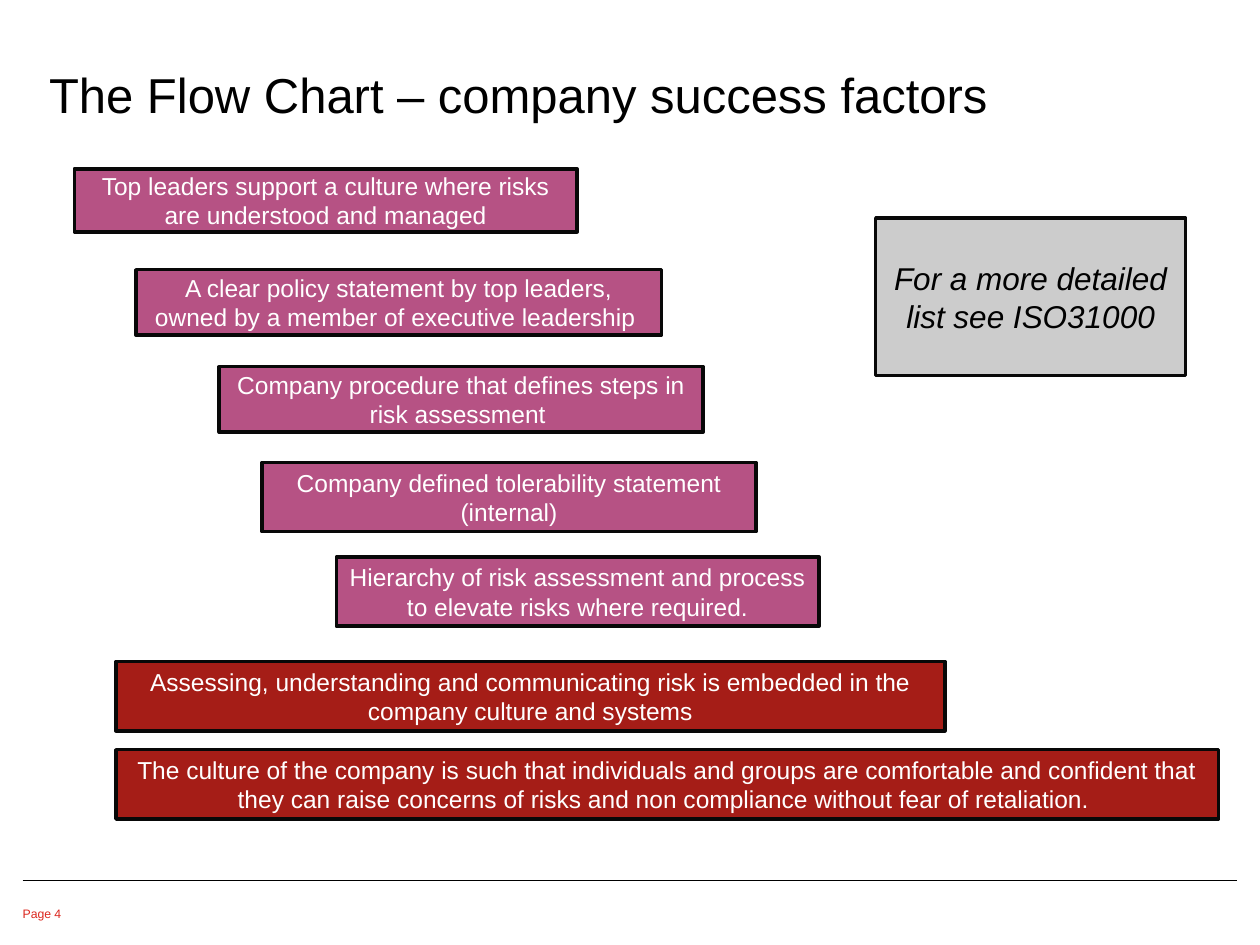
"""Build the company success factors flow chart slide."""
from dataclasses import dataclass

from lxml import etree
from pptx import Presentation
from pptx.dml.color import RGBColor
from pptx.enum import shapes, text
from pptx.oxml.ns import qn
from pptx.util import Inches, Pt


@dataclass(frozen=True)
class Theme:
    font: str = "Arial"
    black: str = "000000"
    white: str = "FFFFFF"
    border: str = "080808"
    step: str = "B65284"
    culture: str = "A51D17"
    note: str = "CCCCCC"
    page: str = "DC271E"
    title_size: int = 28
    note_size: int = 18
    body_size: int = 14
    page_size: int = 7
    border_width: float = 2
    rule_width: float = 0.75


THEME = Theme()

TITLE = ("The Flow Chart – company success factors", (0.39, -0.08, 9.36, 1.06))
PAGE = ("Page 4", (0.18, 7.19, 0.41, 0.15))
NOTE = ("For a more detailed list see ISO31000", (6.95, 1.73, 2.46, 1.25))
STEPS = [
    ("Top leaders support a culture where risks are understood and managed",
     (0.59, 1.34, 3.99, 0.5)),
    ("A clear policy statement by top leaders, owned by a member of executive leadership ",
     (1.08, 2.14, 4.17, 0.52)),
    ("Company procedure that defines steps in risk assessment ",
     (1.74, 2.91, 3.84, 0.52)),
    ("Company defined tolerability statement (internal)",
     (2.08, 3.67, 3.92, 0.55)),
    ("Hierarchy of risk assessment and process to elevate risks where required.",
     (2.67, 4.42, 3.83, 0.55)),
]
CULTURE_LEFT, CULTURE_TOP, CULTURE_HEIGHT, CULTURE_PITCH = 0.92, 5.25, 0.55, 0.7
CULTURE = [
    ("Assessing, understanding and communicating risk is embedded in the "
     "company culture and systems", 6.58),
    ("The culture of the company is such that individuals and groups are comfortable "
     "and confident that they can raise concerns of risks and non compliance "
     "without fear of retaliation. ", 8.75),
]
RULE_LEFT, RULE_RIGHT, RULE_TOP = 0.18, 9.82, 6.99


def color(value):
    return RGBColor.from_string(value)


def write(sp, words, size, ink, italic=None):
    tf = sp.text_frame
    tf.word_wrap = True
    tf.text = words
    p = tf.paragraphs[0]
    font = p.runs[0].font
    font.name, font.size, font.italic = THEME.font, Pt(size), italic
    font.color.rgb = color(ink)
    return tf, p


def add_label(s, words, place, size, ink, anchor):
    sp = s.shapes.add_textbox(*map(Inches, place))
    tf, p = write(sp, words, size, ink)
    tf.margin_left = tf.margin_right = tf.margin_top = tf.margin_bottom = 0
    tf.vertical_anchor = anchor


def add_box(s, words, place, fill, size=THEME.body_size, ink=THEME.white, italic=None):
    sp = s.shapes.add_shape(shapes.MSO_SHAPE.RECTANGLE, *map(Inches, place))
    sp.shadow.inherit = False
    sp.fill.solid()
    sp.fill.fore_color.rgb = color(fill)
    sp.line.color.rgb = color(THEME.border)
    sp.line.width = Pt(THEME.border_width)
    tf, p = write(sp, words, size, ink, italic)
    tf.vertical_anchor = text.MSO_ANCHOR.MIDDLE
    p.alignment = text.PP_ALIGN.CENTER


def add_rule(s):
    ends = map(Inches, (RULE_LEFT, RULE_TOP, RULE_RIGHT, RULE_TOP))
    rule = s.shapes.add_connector(shapes.MSO_CONNECTOR.STRAIGHT, *ends)
    rule.line.color.rgb = color(THEME.black)
    rule.line.width = Pt(THEME.rule_width)
    etree.SubElement(rule._element.spPr, qn("a:effectLst"))


def main():
    prs = Presentation()
    prs.slide_width, prs.slide_height = Inches(10), Inches(7.5)
    s = prs.slides.add_slide(prs.slide_layouts[6])
    add_rule(s)
    add_label(s, *TITLE, THEME.title_size, THEME.black, text.MSO_ANCHOR.BOTTOM)
    add_label(s, *PAGE, THEME.page_size, THEME.page, text.MSO_ANCHOR.TOP)
    for words, place in STEPS:
        add_box(s, words, place, THEME.step)
    add_box(s, *NOTE, THEME.note, THEME.note_size, THEME.black, italic=True)
    for i, (words, width) in enumerate(CULTURE):
        top = CULTURE_TOP + i * CULTURE_PITCH
        add_box(s, words, (CULTURE_LEFT, top, width, CULTURE_HEIGHT), THEME.culture)
    prs.save("out.pptx")


if __name__ == "__main__":
    main()
